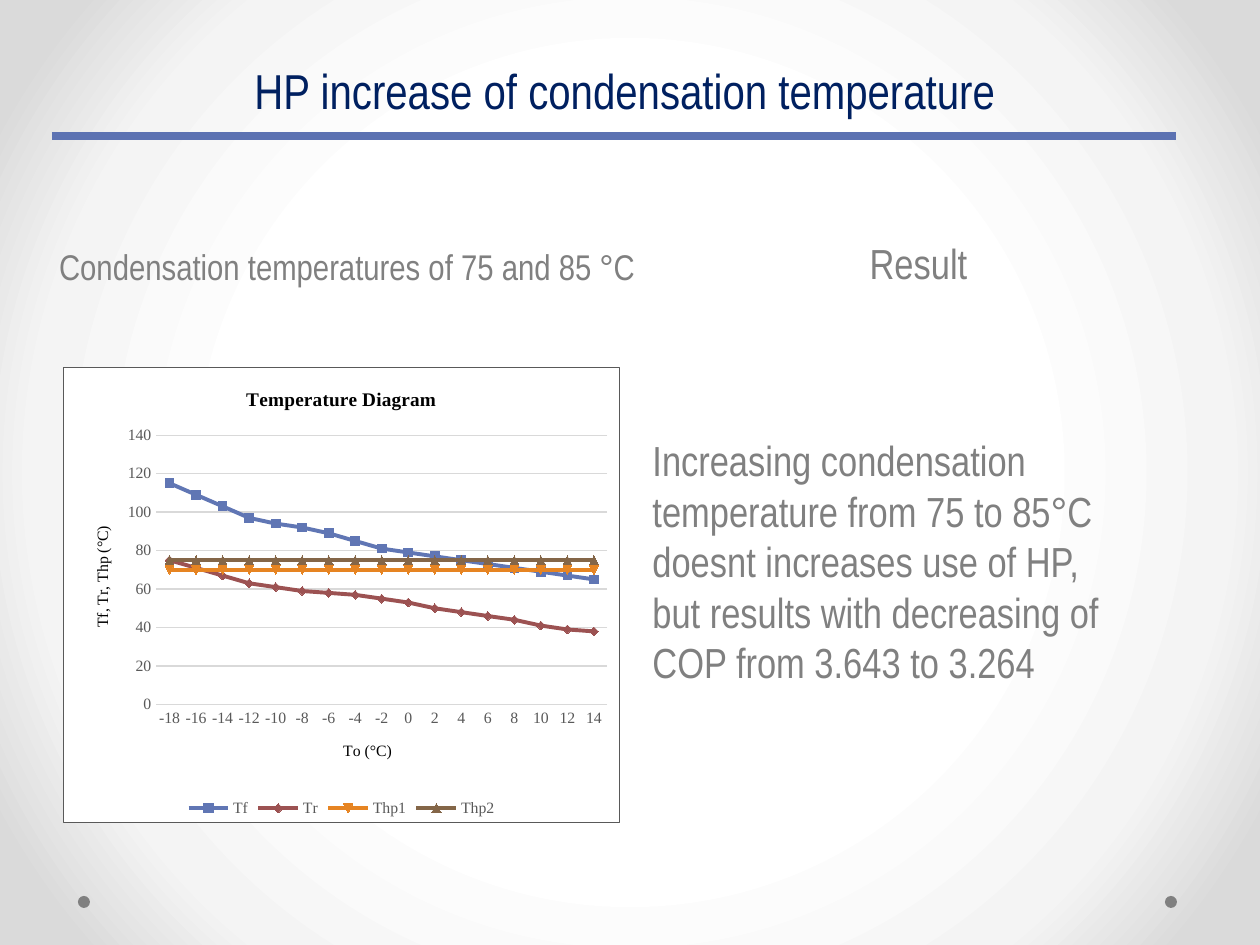
from lxml import etree
from pptx import Presentation
from pptx.chart.data import CategoryChartData
from pptx.dml.color import RGBColor
from pptx.enum.chart import XL_CHART_TYPE, XL_LEGEND_POSITION, XL_TICK_MARK
from pptx.enum.shapes import MSO_CONNECTOR, MSO_SHAPE
from pptx.enum.text import MSO_ANCHOR, PP_ALIGN
from pptx.oxml import parse_xml
from pptx.oxml.ns import nsdecls, qn
from pptx.util import Emu, Pt

LINE, BOTTOM = XL_CHART_TYPE.LINE, XL_LEGEND_POSITION.BOTTOM
NO_TICK = XL_TICK_MARK.NONE
STRAIGHT, OVAL = MSO_CONNECTOR.STRAIGHT, MSO_SHAPE.OVAL
TOP, BASE = MSO_ANCHOR.TOP, MSO_ANCHOR.BOTTOM
LEFT, MID = PP_ALIGN.LEFT, PP_ALIGN.CENTER

# Content
HEX = {"navy": "002060", "grey": "808080", "rule": "5C72B2", "black": "000000",
       "dark": "595959", "pale": "D9D9D9", "white": "FFFFFF"}
STOPS = [(50, "FFFFFF"), (76, "F4F4F4"), (92, "DADADA")]
# text, box in px, size, colour, alignment, anchor, top margin in px
TEXTS = [
    ("HP increase of condensation temperature ", (63, 0, 1134, 126),
     28, "navy", MID, BASE, 6),
    ("Condensation temperatures of 75 and 85 °C", (32, 210, 630, 84),
     20.4, "grey", MID, BASE, 6),
    ("Result", (640, 210, 557, 84), 24, "grey", MID, BASE, 6),
    ("Increasing condensation temperature from 75 to 85°C doesnt increases "
     "use of HP, but results with decreasing of COP from 3.643 to 3.264",
     (640, 367, 473, 456), 24, "grey", LEFT, TOP, 68),
]
CATS = [str(n) for n in range(-18, 15, 2)]
SERIES = [
    ("Tf", "6076B4", [115, 109, 103, 97, 94, 92, 89, 85, 81, 79, 77, 75, 73,
                      71, 69, 67, 65]),
    ("Tr", "9C5252", [75, 71, 67, 63, 61, 59, 58, 57, 55, 53, 50, 48, 46,
                      44, 41, 39, 38]),
    ("Thp1", "E68422", [70] * len(CATS)),
    ("Thp2", "846648", [75] * len(CATS)),
]
CHART = (63, 367, 557, 456)
PLOT = (156, 435, 452, 270)
DOTS, DOT_Y, DOT = (78, 1165), 896, 12
RULE = (52, 136, 1176, 136)


def px(n):
    return Emu(n * 914400 // 126)


def rgb(code):
    return RGBColor.from_string(HEX.get(code, code))


def style(font, **look):
    font.color.rgb = rgb(look.pop("color"))
    for key, val in look.items():
        setattr(font, key, val)


def stroke(line, color, width):
    line.color.rgb = rgb(color)
    line.width = Pt(width)


def serif(size, color, bold=False):
    return {"name": "Times New Roman", "size": Pt(size), "color": color,
            "bold": bold}


def label(owner, text, look):
    frame = owner.text_frame
    frame.text = text
    style(frame.paragraphs[0].runs[0].font, **look)


prs = Presentation()
prs.slide_width, prs.slide_height = px(1260), px(945)
slide = prs.slides.add_slide(prs.slide_layouts[6])
shapes = slide.shapes

# Radial background
slide.background.fill.gradient()
old = slide.element.find(".//" + qn("a:gradFill"))
marks = "".join(f'<a:gs pos="{pos * 1000}"><a:srgbClr val="{code}"/></a:gs>'
                for pos, code in STOPS)
old.getparent().replace(old, parse_xml(
    f'<a:gradFill {nsdecls("a")} rotWithShape="1"><a:gsLst>{marks}</a:gsLst>'
    '<a:path path="circle"><a:fillToRect l="50000" t="50000" r="50000" '
    'b="50000"/></a:path></a:gradFill>'))

# Corner dots
for x in DOTS:
    dot = shapes.add_shape(OVAL, px(x), px(DOT_Y), px(DOT), px(DOT))
    dot.shadow.inherit = False
    dot.fill.solid()
    dot.fill.fore_color.rgb = rgb("grey")
    dot.line.fill.background()

# Title, headings and result
for text, box, size, color, align, anchor, inset in TEXTS:
    frame = shapes.add_textbox(*map(px, box)).text_frame
    form = {"word_wrap": True, "vertical_anchor": anchor,
            "margin_top": px(inset)}
    for key, val in form.items():
        setattr(frame, key, val)
    par = frame.paragraphs[0]
    par.alignment = align
    run = par.add_run()
    run.text = text
    style(run.font, name="Arial Narrow", size=Pt(size), color=color)

# Temperature chart
data = CategoryChartData()
data.categories = CATS
for name, _, vals in SERIES:
    data.add_series(name, vals)
chart = shapes.add_chart(LINE, *map(px, CHART), data).chart
style(chart.font, name="Cambria", size=Pt(10), color="black")
label(chart.chart_title, "Temperature Diagram", serif(11, "black", True))
chart.has_legend = True
chart.legend.position = BOTTOM
chart.legend.include_in_layout = False
style(chart.legend.font, **serif(9, "dark"))
for line, (_, color, _) in zip(chart.plots[0].series, SERIES):
    line.smooth = False
    stroke(line.format.line, color, 2.25)
    line.marker.style = None
chart.plots[0].vary_by_categories = False

# Axes
cat, val = chart.category_axis, chart.value_axis
for axis, text in ((cat, "To (°C)"), (val, "Tf, Tr, Thp (°C)")):
    label(axis.axis_title, text, serif(9, "black"))
    style(axis.tick_labels.font, **serif(9, "dark"))
    axis.major_tick_mark = axis.minor_tick_mark = NO_TICK
stroke(cat.format.line, "pale", 0.75)
stroke(val.major_gridlines.format.line, "pale", 0.75)
val.format.line.fill.background()
val.minimum_scale, val.maximum_scale, val.major_unit = 0, 140, 20

# Plot place and chart frame
area = chart._chartSpace.chart.plotArea
for old in area.findall(qn("c:layout")):
    area.remove(old)
left, top, wide, high = CHART
spots = {"x": (PLOT[0] - left) / wide, "y": (PLOT[1] - top) / high,
         "w": PLOT[2] / wide, "h": PLOT[3] / high}
place = "".join(f'<c:{key} val="{part:.3f}"/>' for key, part in spots.items())
area.insert(0, parse_xml(
    f'<c:layout {nsdecls("c")}><c:manualLayout><c:layoutTarget val="inner"/>'
    f'<c:xMode val="edge"/><c:yMode val="edge"/>{place}'
    '</c:manualLayout></c:layout>'))
area.getparent().addnext(parse_xml(
    f'<c:spPr {nsdecls("c", "a")}><a:solidFill><a:srgbClr '
    f'val="{HEX["white"]}"/></a:solidFill><a:ln w="{Pt(0.5)}"><a:solidFill>'
    f'<a:srgbClr val="{HEX["dark"]}"/></a:solidFill></a:ln></c:spPr>'))

# Title rule
rule = shapes.add_connector(STRAIGHT, *map(px, RULE))
stroke(rule.line, "rule", 4.5)
etree.SubElement(rule._element.spPr, qn("a:effectLst"))

prs.save("out.pptx")
